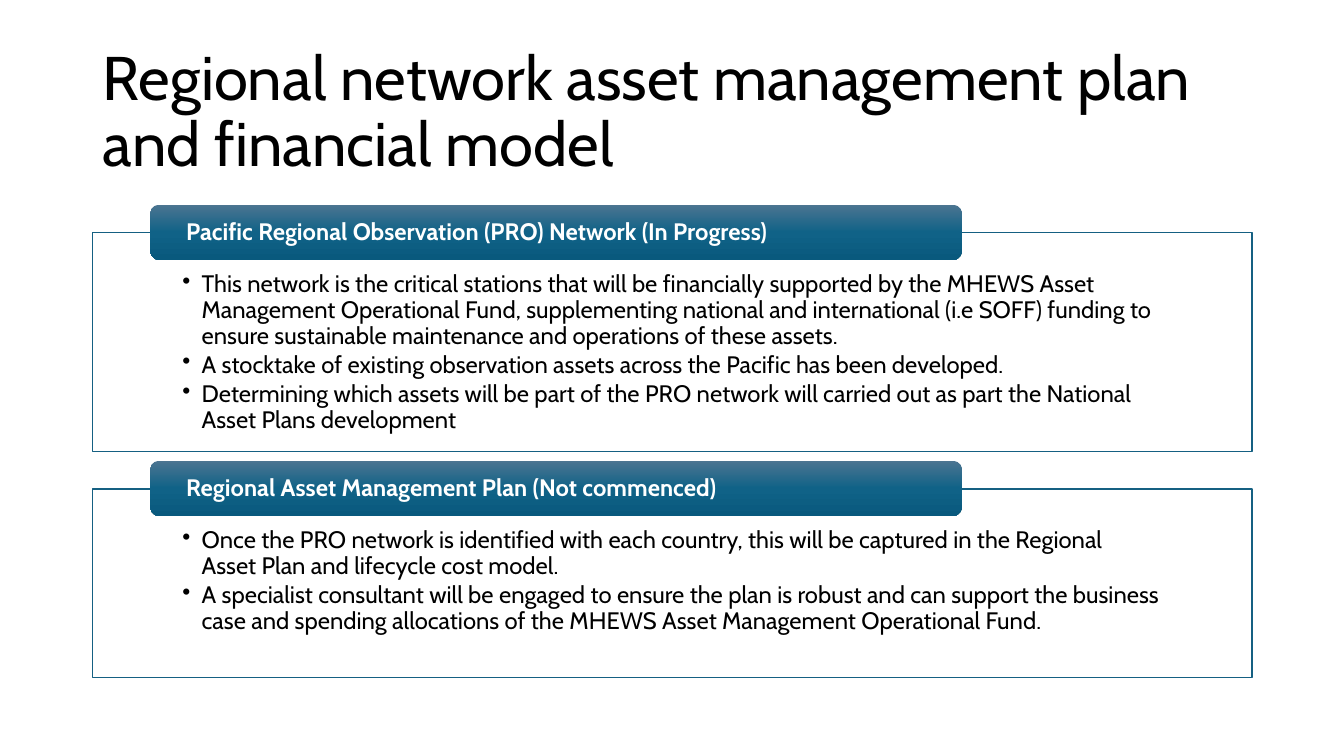
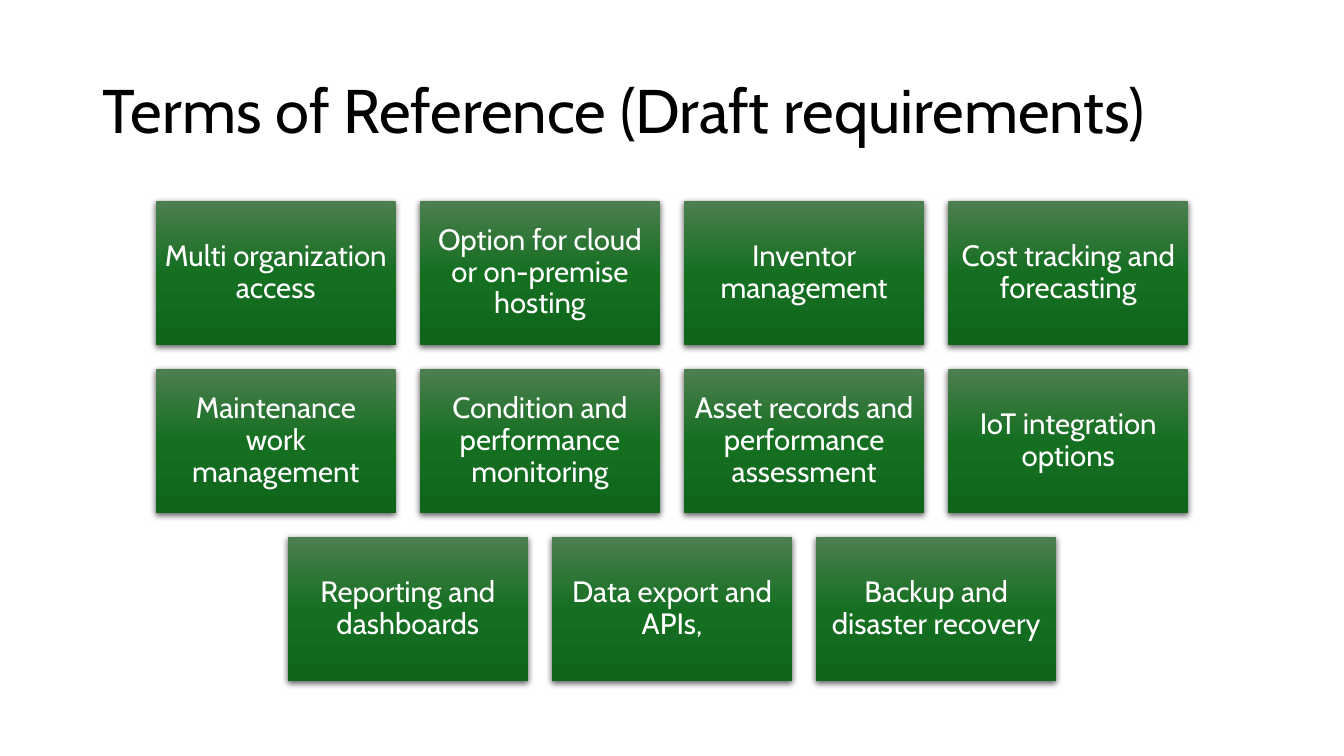
from dataclasses import dataclass

from lxml.etree import SubElement
from pptx import Presentation
from pptx.dml.color import RGBColor
from pptx.enum.shapes import MSO_SHAPE
from pptx.enum.text import MSO_ANCHOR as Anchor
from pptx.enum.text import MSO_AUTO_SIZE as AutoSize
from pptx.enum.text import PP_ALIGN as Align
from pptx.oxml.ns import qn
from pptx.presentation import Presentation as Deck
from pptx.shapes.autoshape import Shape
from pptx.slide import Slide
from pptx.text.text import TextFrame
from pptx.util import Inches, Pt

# Shared style
FONT = "Cabin"
BLACK = RGBColor(0x00, 0x00, 0x00)
WHITE = RGBColor(0xFF, 0xFF, 0xFF)
BLUE = RGBColor(0x15, 0x60, 0x82)
BLUE_GRADIENT = (
    RGBColor(0x4C, 0x75, 0x91),
    RGBColor(0x10, 0x62, 0x87),
    RGBColor(0x09, 0x59, 0x7D),
)
GREEN_GRADIENT = (
    RGBColor(0x4D, 0x7E, 0x50),
    RGBColor(0x15, 0x6F, 0x21),
    RGBColor(0x0F, 0x66, 0x1B),
)
SLIDE_WIDTH, SLIDE_HEIGHT = 13.33, 7.5
CONTENT_LEFT, CONTENT_WIDTH = 0.92, 11.5
TITLE_ONLY = 5

# Card grid
CARD_WIDTH, CARD_HEIGHT, CARD_GAP = 2.38, 1.43, 0.24
CARDS_TOP = 1.99


@dataclass(frozen=True)
class Box:
    left: float
    top: float
    width: float
    height: float


@dataclass(frozen=True)
class Section:
    heading: str
    points: tuple[str, ...]
    top: float
    height: float


SECTIONS = (
    Section(
        "Pacific Regional Observation (PRO) Network (In Progress)",
        (
            "This network is the critical stations that will be financially "
            "supported by the MHEWS Asset Management Operational Fund, "
            "supplementing national and international (i.e SOFF) funding to "
            "ensure sustainable maintenance and operations of these assets.",
            "A stocktake of existing observation assets across the Pacific "
            "has been developed.",
            "Determining which assets will be part of the PRO network will "
            "carried out as part the National Asset Plans development",
        ),
        top=2.31,
        height=2.17,
    ),
    Section(
        "Regional Asset Management Plan (Not commenced)",
        (
            "Once the PRO network is identified with each country, this will "
            "be captured in the Regional Asset Plan and lifecycle cost model.",
            "A specialist consultant will be engaged to ensure the plan is "
            "robust and can support the business case and spending "
            "allocations of the MHEWS Asset Management Operational Fund.",
        ),
        top=4.85,
        height=1.87,
    ),
)

REQUIREMENT_ROWS = (
    (
        "Multi organization access",
        "Option for cloud or on-premise hosting",
        "Inventor management",
        "Cost tracking and forecasting",
    ),
    (
        "Maintenance work management",
        "Condition and performance monitoring",
        "Asset records and performance assessment",
        "IoT integration options",
    ),
    (
        "Reporting and dashboards",
        "Data export and APIs,",
        "Backup and disaster recovery",
    ),
)


def format_text(
    frame: TextFrame,
    size: float,
    color: RGBColor,
    align: Align = Align.LEFT,
    anchor: Anchor = Anchor.MIDDLE,
    bold: bool = False,
) -> None:
    frame.word_wrap = True
    frame.auto_size = AutoSize.NONE
    frame.vertical_anchor = anchor
    for paragraph in frame.paragraphs:
        paragraph.alignment = align
        paragraph.line_spacing = 0.9
        for run in paragraph.runs:
            run.font.name = FONT
            run.font.size = Pt(size)
            run.font.bold = bold
            run.font.color.rgb = color


def set_margins(frame: TextFrame, left: float, top: float, right: float, bottom: float) -> None:
    frame.margin_left, frame.margin_top = Inches(left), Inches(top)
    frame.margin_right, frame.margin_bottom = Inches(right), Inches(bottom)


def add_box(slide: Slide, kind: MSO_SHAPE, box: Box) -> Shape:
    shape = slide.shapes.add_shape(
        kind, Inches(box.left), Inches(box.top), Inches(box.width), Inches(box.height)
    )
    shape.shadow.inherit = False
    shape.line.fill.background()
    return shape


def fill_gradient(shape: Shape, colors: tuple[RGBColor, ...]) -> None:
    """Spread the colours evenly from top to bottom."""
    shape.fill.gradient()
    shape.fill.gradient_angle = 270
    stops = shape.element.spPr.find(".//" + qn("a:gsLst"))
    stops.clear()
    for index, color in enumerate(colors):
        position = 100000 * index // (len(colors) - 1)
        stop = SubElement(stops, qn("a:gs"), pos=str(position))
        SubElement(stop, qn("a:srgbClr"), val=str(color))


def add_shadow(shape: Shape) -> None:
    effects = shape.element.spPr.find(qn("a:effectLst"))
    shadow = SubElement(
        effects,
        qn("a:outerShdw"),
        blurRad=str(Pt(4.5)),
        dist=str(Pt(1.5)),
        dir="5400000",
        algn="ctr",
        rotWithShape="0",
    )
    color = SubElement(shadow, qn("a:srgbClr"), val=str(BLACK))
    SubElement(color, qn("a:alpha"), val="63000")


def add_bullets(frame: TextFrame) -> None:
    for paragraph in frame.paragraphs:
        properties = paragraph._p.get_or_add_pPr()
        properties.set("marL", str(Inches(0.19)))
        properties.set("indent", str(Inches(-0.19)))
        SubElement(properties, qn("a:buChar"), char="•")
        paragraph.space_after = Pt(2.55)


def add_titled_slide(deck: Deck, heading: str) -> Slide:
    slide = deck.slides.add_slide(deck.slide_layouts[TITLE_ONLY])
    title = slide.shapes.title
    title.left, title.top = Inches(CONTENT_LEFT), Inches(0.4)
    title.width, title.height = Inches(CONTENT_WIDTH), Inches(1.45)
    title.text_frame.text = heading
    format_text(title.text_frame, 44, BLACK)
    return slide


def add_section(slide: Slide, section: Section) -> None:
    # Outlined panel with its points
    panel = add_box(
        slide,
        MSO_SHAPE.RECTANGLE,
        Box(CONTENT_LEFT, section.top, CONTENT_WIDTH, section.height),
    )
    panel.fill.solid()
    panel.fill.fore_color.rgb = WHITE
    panel.line.color.rgb = BLUE
    panel.line.width = Pt(1)
    points = panel.text_frame
    points.text = "\n".join(section.points)
    set_margins(points, 0.89, 0.39, 0.89, 0.13)
    add_bullets(points)
    format_text(points, 17, BLACK, anchor=Anchor.TOP)

    # Heading band across the panel's top edge
    band = add_box(
        slide, MSO_SHAPE.ROUNDED_RECTANGLE, Box(1.49, section.top - 0.28, 8.05, 0.55)
    )
    fill_gradient(band, BLUE_GRADIENT)
    band.text_frame.text = section.heading
    set_margins(band.text_frame, 0.33, 0, 0.33, 0)
    format_text(band.text_frame, 17, WHITE, bold=True)


def add_card(slide: Slide, requirement: str, left: float, top: float) -> None:
    card = add_box(slide, MSO_SHAPE.RECTANGLE, Box(left, top, CARD_WIDTH, CARD_HEIGHT))
    fill_gradient(card, GREEN_GRADIENT)
    add_shadow(card)
    card.text_frame.text = requirement
    set_margins(card.text_frame, 0.09, 0.09, 0.09, 0.09)
    format_text(card.text_frame, 21, WHITE, align=Align.CENTER)


def build_plan_slide(deck: Deck) -> None:
    slide = add_titled_slide(
        deck, "Regional network asset management plan and financial model"
    )
    for section in SECTIONS:
        add_section(slide, section)


def build_requirements_slide(deck: Deck) -> None:
    slide = add_titled_slide(deck, "Terms of Reference (Draft requirements)")
    for row, requirements in enumerate(REQUIREMENT_ROWS):
        # Each row is centred on the slide
        row_width = len(requirements) * (CARD_WIDTH + CARD_GAP) - CARD_GAP
        row_left = (SLIDE_WIDTH - row_width) / 2
        top = CARDS_TOP + row * (CARD_HEIGHT + CARD_GAP)
        for column, requirement in enumerate(requirements):
            left = row_left + column * (CARD_WIDTH + CARD_GAP)
            add_card(slide, requirement, left, top)


def main() -> None:
    deck = Presentation()
    deck.slide_width = Inches(SLIDE_WIDTH)
    deck.slide_height = Inches(SLIDE_HEIGHT)
    build_plan_slide(deck)
    build_requirements_slide(deck)
    deck.save("out.pptx")


if __name__ == "__main__":
    main()
